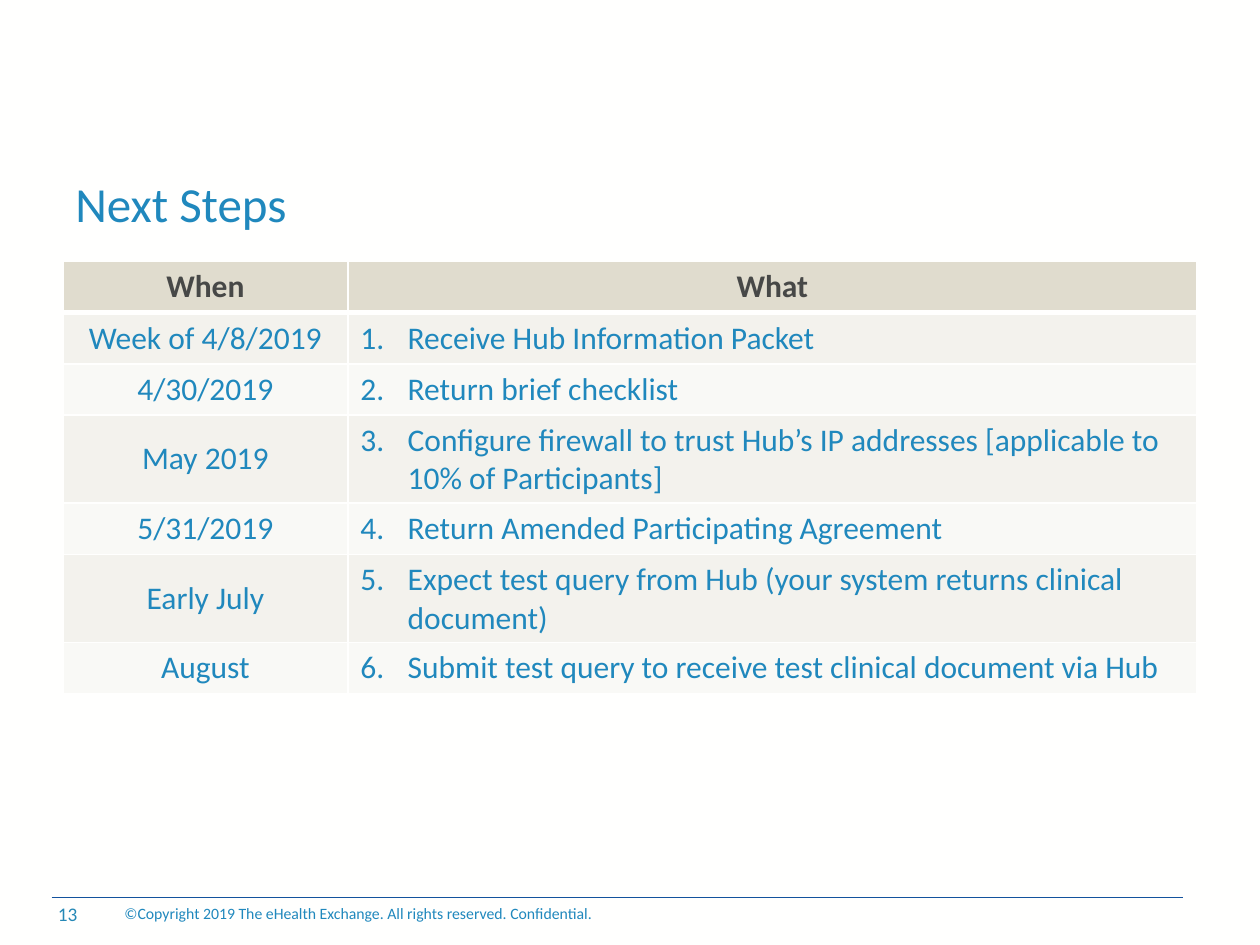
"""Build the Next Steps slide with its schedule table."""
from dataclasses import dataclass

from lxml import etree
from pptx import Presentation
from pptx.dml.color import RGBColor
from pptx.enum import shapes, text
from pptx.oxml import ns
from pptx.util import Pt

TITLE = "Next Steps"
PAGE_NUMBER = "13"
COPYRIGHT = "©Copyright 2019 The eHealth Exchange. All rights reserved. Confidential."
HEADERS = ("When", "What")
STEPS = [
    ("Week of 4/8/2019", "Receive Hub Information Packet"),
    ("4/30/2019", "Return brief checklist"),
    ("May 2019", "Configure firewall to trust Hub’s IP addresses [applicable to 10% of Participants]"),
    ("5/31/2019", "Return Amended Participating Agreement"),
    ("Early July", "Expect test query from Hub (your system returns clinical document)"),
    ("August", "Submit test query to receive test clinical document via Hub"),
]


@dataclass(frozen=True)
class Theme:
    font: str = "Calibri"
    background: str = "FFFFFE"
    blue: str = "2088BD"
    number: str = "2588B6"
    rule: str = "13529D"
    header_text: str = "474847"
    header_fill: str = "E0DCCE"
    bands: tuple = ("F3F2ED", "F9F9F6")
    title_size: int = 28
    table_size: int = 18
    number_size: int = 11
    copyright_size: int = 9


THEME = Theme()
COLUMN_WIDTHS = (162.75, 485.25)
ROW_HEIGHT = 29.2
INDENT = 27


def color(value):
    return RGBColor.from_string(value)


def add_run(paragraph, words, size, ink, bold=False):
    run = paragraph.add_run()
    run.text = words
    run.font.name = THEME.font
    run.font.size = Pt(size)
    run.font.bold = bold
    run.font.color.rgb = color(ink)


def add_label(slide, box, words, size, ink, anchor):
    shape = slide.shapes.add_textbox(*map(Pt, box))
    frame = shape.text_frame
    frame.word_wrap = True
    frame.vertical_anchor = anchor
    add_run(frame.paragraphs[0], words, size, ink)


def number_paragraph(paragraph, number):
    properties = paragraph._p.get_or_add_pPr()
    properties.set("marL", str(Pt(INDENT)))
    properties.set("indent", str(-Pt(INDENT)))
    bullet = etree.SubElement(properties, ns.qn("a:buAutoNum"), type="arabicPeriod")
    bullet.set("startAt", str(number))


def add_borders(cell, bottom_width):
    properties = cell._tc.get_or_add_tcPr()
    widths = {"L": 1, "R": 1, "T": 1, "B": bottom_width}
    for position, (side, width) in enumerate(widths.items()):
        line = etree.Element(ns.qn(f"a:ln{side}"), w=str(Pt(width)))
        fill = etree.SubElement(line, ns.qn("a:solidFill"))
        etree.SubElement(fill, ns.qn("a:srgbClr"), val=THEME.background)
        properties.insert(position, line)


def add_schedule(slide):
    rows = [HEADERS, *STEPS]
    table = slide.shapes.add_table(
        len(rows), len(HEADERS), Pt(36), Pt(149.5),
        Pt(sum(COLUMN_WIDTHS)), Pt(ROW_HEIGHT * len(rows))).table
    for column, width in zip(table.columns, COLUMN_WIDTHS):
        column.width = Pt(width)
    for row_index, row in enumerate(rows):
        table.rows[row_index].height = Pt(ROW_HEIGHT)
        header = row_index == 0
        fill = THEME.header_fill if header else THEME.bands[(row_index - 1) % 2]
        ink = THEME.header_text if header else THEME.blue
        for column_index, words in enumerate(row):
            cell = table.cell(row_index, column_index)
            cell.vertical_anchor = text.MSO_ANCHOR.MIDDLE
            cell.fill.solid()
            cell.fill.fore_color.rgb = color(fill)
            add_borders(cell, 3 if header or row_index == 0 else 1)
            paragraph = cell.text_frame.paragraphs[0]
            if header or column_index == 0:
                paragraph.alignment = text.PP_ALIGN.CENTER
            else:
                number_paragraph(paragraph, row_index)
            add_run(paragraph, words, THEME.table_size, ink, header)


def add_footer(slide):
    rule = slide.shapes.add_connector(
        shapes.MSO_CONNECTOR.STRAIGHT, Pt(29.5), Pt(513), Pt(676), Pt(513))
    rule.line.color.rgb = color(THEME.rule)
    rule.line.width = Pt(0.5)
    etree.SubElement(rule._element.spPr, ns.qn("a:effectLst"))
    add_label(slide, (64, 507.6, 290, 28.8), COPYRIGHT,
              THEME.copyright_size, THEME.blue, text.MSO_ANCHOR.MIDDLE)
    add_label(slide, (26, 512, 168, 28.8), PAGE_NUMBER,
              THEME.number_size, THEME.number, text.MSO_ANCHOR.TOP)


def main():
    presentation = Presentation()
    presentation.slide_width, presentation.slide_height = Pt(720), Pt(540)
    slide = presentation.slides.add_slide(presentation.slide_layouts[6])
    slide.background.fill.solid()
    slide.background.fill.fore_color.rgb = color(THEME.background)
    add_label(slide, (36, 57.6, 648, 78.5), TITLE,
              THEME.title_size, THEME.blue, text.MSO_ANCHOR.BOTTOM)
    add_schedule(slide)
    add_footer(slide)
    presentation.save("out.pptx")


if __name__ == "__main__":
    main()
